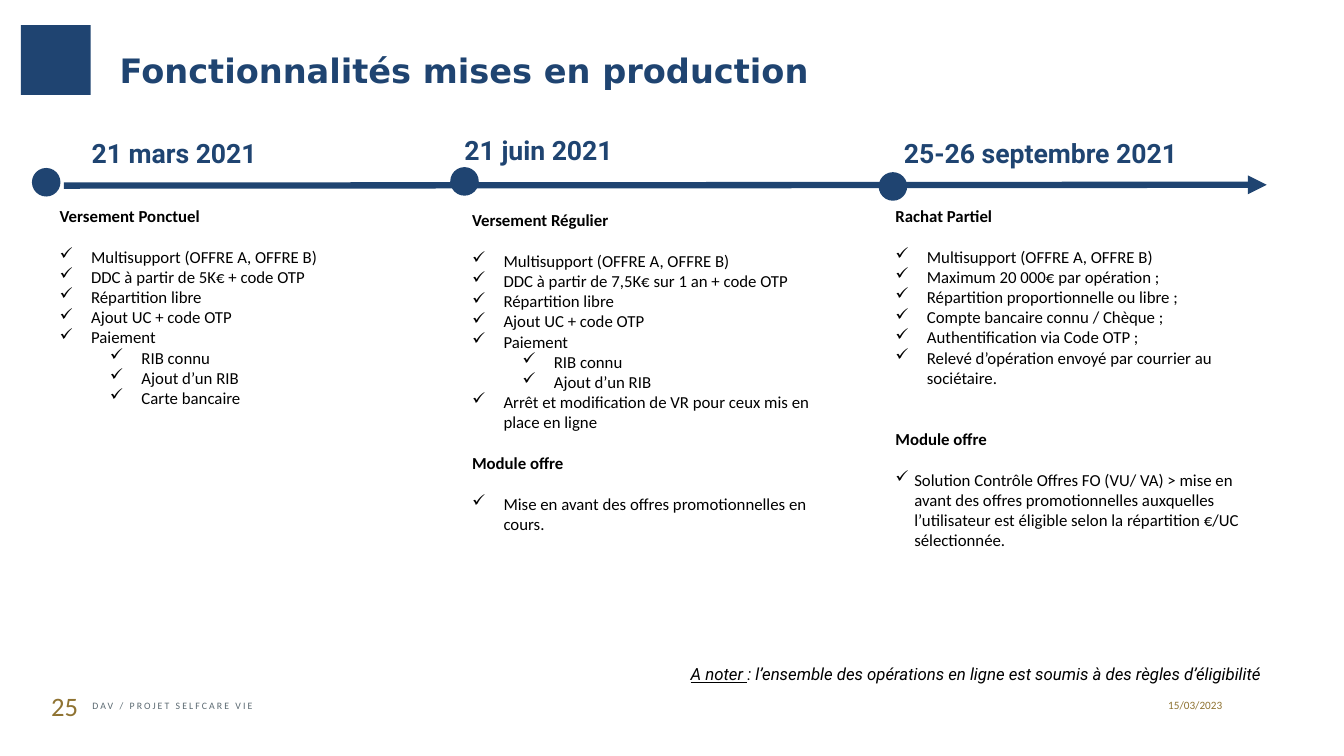
"""Build the slide showing the three production releases on a timeline."""
from lxml import etree
from pptx import Presentation
from pptx.dml.color import RGBColor
from pptx.enum.shapes import MSO_CONNECTOR, MSO_SHAPE
from pptx.enum.text import MSO_ANCHOR, PP_ALIGN
from pptx.oxml.ns import qn
from pptx.util import Inches, Pt

RECTANGLE, OVAL = MSO_SHAPE.RECTANGLE, MSO_SHAPE.OVAL
STRAIGHT = MSO_CONNECTOR.STRAIGHT
TOP, MIDDLE = MSO_ANCHOR.TOP, MSO_ANCHOR.MIDDLE
LEFT, CENTER, RIGHT = PP_ALIGN.LEFT, PP_ALIGN.CENTER, PP_ALIGN.RIGHT

COLORS = {"navy": "1F4471", "gold": "8F7332", "black": "000000", "slate": "5B6971"}
COLUMNS, ROWS = 160, 90

deck = Presentation()
deck.slide_width, deck.slide_height = Inches(13.33), Inches(7.5)
page = deck.slides.add_slide(deck.slide_layouts[6])
column, row = deck.slide_width / COLUMNS, deck.slide_height / ROWS


def add_box(left, top, width, height, inset=(1.2, 0.6), anchor=TOP):
    """Add a wrapping text box placed on the grid and return its text frame."""
    box = page.shapes.add_textbox(int(left * column), int(top * row),
                                  int(width * column), int(height * row))
    frame = box.text_frame
    frame.word_wrap = True
    frame.vertical_anchor = anchor
    frame.margin_left = frame.margin_right = int(inset[0] * column)
    frame.margin_top = frame.margin_bottom = int(inset[1] * row)
    return frame


def add_span(para, text, size, font, color, bold=False):
    """Add one formatted run to a paragraph and return it."""
    span = para.add_run()
    span.text = text
    span.font.size, span.font.name, span.font.bold = Pt(size), font, bold
    span.font.color.rgb = RGBColor.from_string(COLORS[color])
    return span


SUPPORT = ("item", "Multisupport (OFFRE A, OFFRE B)")
COMMON = [("item", "Répartition libre"), ("item", "Ajout UC + code OTP"),
          ("item", "Paiement"), ("sub", "RIB connu"), ("sub", "Ajout d’un RIB")]

# Each release: date, date box, dot position, body box, body lines
releases = [
    ("21 mars 2021", (9.7, 15.7, 43.8, 5), (3.8, 20), (5, 23.4, 45.1, 26.4), [
        ("head", "Versement Ponctuel"), SUPPORT,
        ("item", "DDC à partir de 5K€ + code OTP"), *COMMON,
        ("sub", "Carte bancaire")]),
    ("21 juin 2021", (54.1, 15.4, 38.6, 5), (53.6, 19.9), (54.1, 23.9, 47.5, 40.9), [
        ("head", "Versement Régulier"), SUPPORT,
        ("item", "DDC à partir de 7,5K€ sur 1 an + code OTP"), *COMMON,
        ("item", "Arrêt et modification de VR pour ceux mis en place en ligne"),
        ("head", "Module offre"),
        ("item", "Mise en avant des offres promotionnelles en cours.")]),
    ("25-26 septembre 2021", (106.4, 15.7, 46.4, 5), (104.6, 20.5), (104.5, 23.4, 46, 48.2), [
        ("head", "Rachat Partiel"), SUPPORT,
        ("item", "Maximum 20 000€ par opération ;"),
        ("item", "Répartition proportionnelle ou libre ;"),
        ("item", "Compte bancaire connu / Chèque ;"),
        ("item", "Authentification via Code OTP ;"),
        ("item", "Relevé d’opération envoyé par courrier au sociétaire."),
        ("far head", "Module offre"),
        ("close item", "Solution Contrôle Offres FO (VU/ VA) > mise en avant des offres "
         "promotionnelles auxquelles l’utilisateur est éligible selon la répartition "
         "€/UC sélectionnée.")]),
]
INDENTS = {"item": (3.75, 3.75), "sub": (9.75, 3.75), "close item": (2.25, 2.25)}
LINE = 14.65

axis = page.shapes.add_connector(STRAIGHT, int(7.6 * column), int(22.1 * row),
                                 int(150.8 * column), int(22 * row))
axis.line.color.rgb = RGBColor.from_string(COLORS["navy"])
axis.line.width = Pt(4.5)
etree.SubElement(axis.line._get_or_add_ln(), qn("a:tailEnd"), type="triangle")
etree.SubElement(axis._element.spPr, qn("a:effectLst"))

marks = [(RECTANGLE, 2.5, 3, 8.3)] + [(OVAL, *release[2], 3.4) for release in releases]
for kind, left, top, size in marks:
    mark = page.shapes.add_shape(kind, int(left * column), int(top * row),
                                 int(size * column), int(size * row))
    mark.shadow.inherit = False
    mark.fill.solid()
    mark.fill.fore_color.rgb = RGBColor.from_string(COLORS["navy"])
    mark.line.fill.background()

for date, date_place, dot, body_place, lines in releases:
    add_span(add_box(*date_place).paragraphs[0], date, 19, "Roboto", "navy", True)
    frame = add_box(*body_place, inset=(2.1, 1.1))
    after_head = False
    for number, (kind, text) in enumerate(lines):
        para = frame.paragraphs[0] if number == 0 else frame.add_paragraph()
        is_head = kind.endswith("head")
        if number and (is_head or after_head):
            para.space_before = Pt(LINE * (2 if kind == "far head" else 1))
        if kind in INDENTS:
            margin, hang = INDENTS[kind]
            para.level = 1 if kind == "sub" else 0
            properties = para._p.get_or_add_pPr()
            properties.set("marL", str(int(margin * column)))
            properties.set("indent", str(-int(hang * column)))
            etree.SubElement(properties, qn("a:buChar"), char="✓")
        add_span(para, text, 12, "Calibri", "black", is_head)
        after_head = is_head

labels = [
    ("Fonctionnalités mises en production", (12.7, 4.2, 121.6, 8.3), (1.56, 0.84),
     MIDDLE, LEFT, 24, "DejaVu Sans", "navy", True),
    ("25", (4.9, 81.5, 7.1, 4.8), (1.2, 0.6), TOP, LEFT, 19, "Calibri", "gold", False),
    ("15/03/2023", (138.8, 82.9, 7, 2), (0, 0), MIDDLE, CENTER, 8, "Calibri", "gold", False),
]
for text, place, inset, anchor, align, *style in labels:
    para = add_box(*place, inset, anchor).paragraphs[0]
    para.alignment = align
    add_span(para, text, *style)

footer = add_box(11, 81.6, 124, 4.8, (0, 0), MIDDLE).paragraphs[0]
project = add_span(footer, "DAV / PROJET SELFCARE VIE", 7, "Calibri", "slate")
project.font._element.set("spc", "150")

note = add_box(4.2, 78.4, 147.2, 3.6).paragraphs[0]
note.alignment = RIGHT
for text, underlined in (("A noter ", True),
                         (": l’ensemble des opérations en ligne est soumis à des règles "
                          "d’éligibilité", False)):
    span = add_span(note, text, 12, "Roboto", "black")
    span.font.italic, span.font.underline = True, underlined

deck.save("out.pptx")
